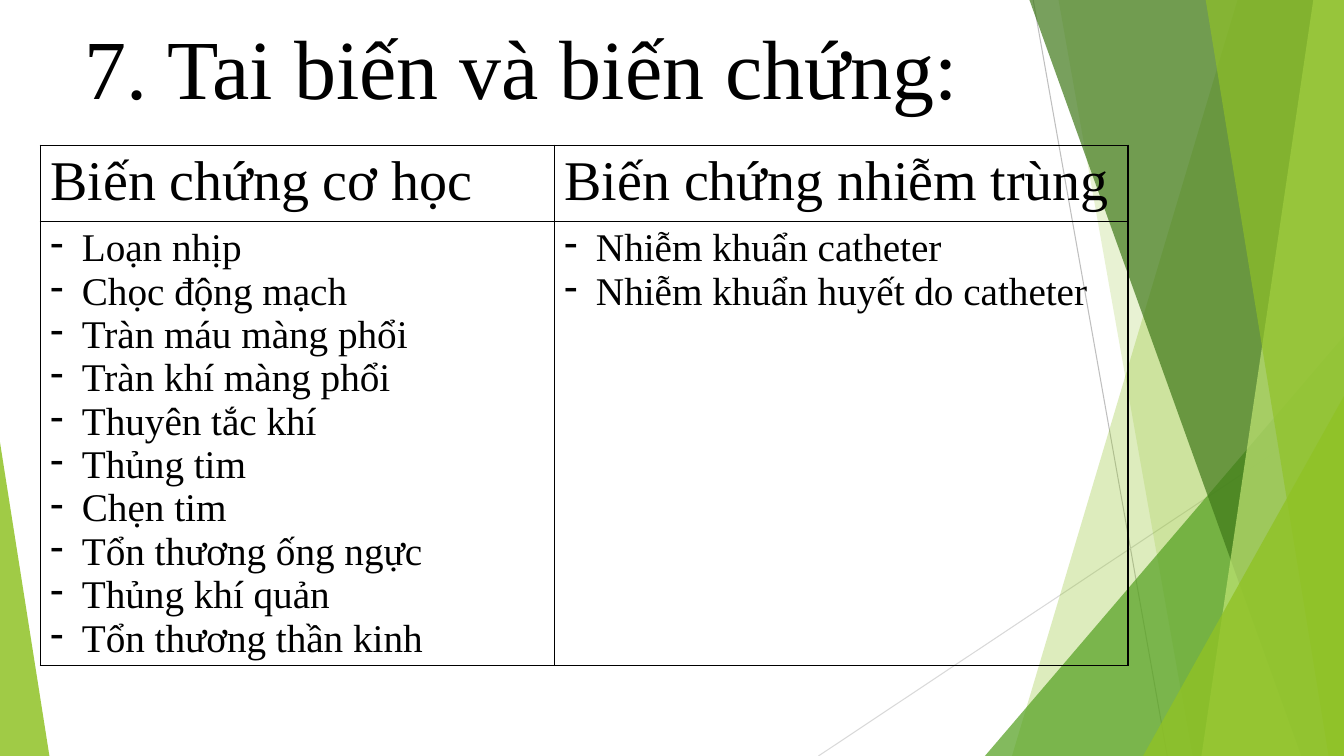
from lxml import etree
from pptx import Presentation
from pptx import util as u
from pptx.dml import color
from pptx.enum import shapes, text
from pptx.oxml import ns

Pt = u.Pt
WIDTH, HEIGHT, TOP = 960, 540, -0.67
FONT = "Times New Roman"
BLACK = "000000"

TITLE = "7. Tai biến và biến chứng:"
COLUMNS = [
    (367.2, "Biến chứng cơ học", [
        "Loạn nhịp", "Chọc động mạch", "Tràn máu màng phổi",
        "Tràn khí màng phổi", "Thuyên tắc khí", "Thủng tim", "Chẹn tim",
        "Tổn thương ống ngực", "Thủng khí quản", "Tổn thương thần kinh"]),
    (409.7, "Biến chứng nhiễm trùng", [
        "Nhiễm khuẩn catheter", "Nhiễm khuẩn huyết do catheter"]),
]


def rgb(value):
    return color.RGBColor.from_string(value)


def sub(parent, tag, **attributes):
    return etree.SubElement(parent, ns.qn(tag), **attributes)


def paint(shape, fill, opacity):
    """Flat translucent fill without outline or shadow."""
    shape.shadow.inherit = False
    shape.line.fill.background()
    shape.fill.solid()
    shape.fill.fore_color.rgb = rgb(fill)
    colour = shape.fill._xPr.find(".//" + ns.qn("a:srgbClr"))
    sub(colour, "a:alpha", val=str(opacity * 1000))


def add_ribbon(group, top_left, bottom_left, fill, opacity):
    """Full-height band from a slanted left edge to the slide's right edge."""
    builder = group.shapes.build_freeform(Pt(top_left), Pt(TOP), scale=1.0)
    corners = [(WIDTH, TOP), (WIDTH, HEIGHT), (bottom_left, HEIGHT)]
    builder.add_line_segments([(Pt(x), Pt(y)) for x, y in corners], close=True)
    paint(builder.convert_to_shape(), fill, opacity)


def add_corner(group, left, top, width, apex, fill, opacity):
    """Right triangle standing on the slide's bottom edge."""
    shape = group.shapes.add_shape(
        shapes.MSO_SHAPE.ISOSCELES_TRIANGLE,
        Pt(left), Pt(top), Pt(width), Pt(HEIGHT - top))
    shape.adjustments[0] = apex
    paint(shape, fill, opacity)


def add_hairline(group, x1, y1, x2, y2, stroke):
    connector = group.shapes.add_connector(
        shapes.MSO_CONNECTOR.STRAIGHT, Pt(x1), Pt(y1), Pt(x2), Pt(y2))
    connector.line.color.rgb = rgb(stroke)
    connector.line.width = Pt(0.75)
    sub(connector._element.spPr, "a:effectLst")


def add_run(paragraph, content, size):
    run = paragraph.add_run()
    run.text = content
    run.font.name = FONT
    run.font.size = Pt(size)
    run.font.bold = False
    run.font.color.rgb = rgb(BLACK)


def add_dash(paragraph):
    properties = paragraph._p.get_or_add_pPr()
    properties.set("marL", str(Pt(22.5)))
    properties.set("indent", str(-Pt(22.5)))
    sub(properties, "a:buFontTx")
    sub(properties, "a:buChar", char="-")


def fill_cell(cell, lines, size, dashed):
    # Borders come before the fill in the cell properties
    properties = cell._tc.get_or_add_tcPr()
    for side in ("a:lnL", "a:lnR", "a:lnT", "a:lnB"):
        border = sub(properties, side, w=str(Pt(1)))
        sub(sub(border, "a:solidFill"), "a:srgbClr", val=BLACK)
    cell.fill.background()
    frame = cell.text_frame
    for index, line in enumerate(lines):
        paragraph = frame.add_paragraph() if index else frame.paragraphs[0]
        if dashed:
            add_dash(paragraph)
        add_run(paragraph, line, size)


def add_decoration(slide):
    group = slide.shapes.add_group_shape()
    add_hairline(group, 738, 0, 833.8, HEIGHT, "BFBFBF")
    add_hairline(group, WIDTH, 290.2, 584.6, HEIGHT, "D9D9D9")
    add_ribbon(group, 884.2, 722.9, "90C226", 30)
    add_ribbon(group, 756, 851.8, "90C226", 20)
    add_corner(group, 703.5, 240, 256.5, 1, "54A021", 72)
    add_ribbon(group, 735.1, 929.5, "3F7819", 70)
    add_ribbon(group, 938.2, 858.2, "C0E474", 70)
    add_ribbon(group, 861.1, 949, "90C226", 65)
    add_corner(group, 816.5, 283, 143.5, 1, "90C226", 80)
    add_corner(group, 0, 316, 35.3, 0, "90C226", 85)


def add_title(slide):
    title = slide.shapes.title
    slide.shapes._spTree.append(title._element)  # in front of the decoration
    title.left, title.top = Pt(53.3), Pt(0)
    title.width, title.height = Pt(676.8), Pt(103.7)
    frame = title.text_frame
    frame.auto_size = text.MSO_AUTO_SIZE.NONE
    frame.vertical_anchor = text.MSO_ANCHOR.TOP
    frame.margin_top = Pt(11.4)
    paragraph = frame.paragraphs[0]
    paragraph.alignment = text.PP_ALIGN.LEFT
    add_run(paragraph, TITLE, 60)


def add_complications(slide):
    total = sum(width for width, _, _ in COLUMNS)
    table = slide.shapes.add_table(
        2, len(COLUMNS), Pt(28.8), Pt(103.7), Pt(total), Pt(363.6)).table
    table.first_row = table.horz_banding = False
    table.rows[0].height, table.rows[1].height = Pt(54.7), Pt(308.9)
    for index, (width, heading, items) in enumerate(COLUMNS):
        table.columns[index].width = Pt(width)
        fill_cell(table.cell(0, index), [heading], 40, dashed=False)
        fill_cell(table.cell(1, index), items, 28, dashed=True)


def main():
    presentation = Presentation()
    presentation.slide_width = Pt(WIDTH)
    presentation.slide_height = Pt(HEIGHT)
    slide = presentation.slides.add_slide(presentation.slide_layouts[5])
    add_decoration(slide)
    add_title(slide)
    add_complications(slide)
    presentation.save("out.pptx")


if __name__ == "__main__":
    main()
